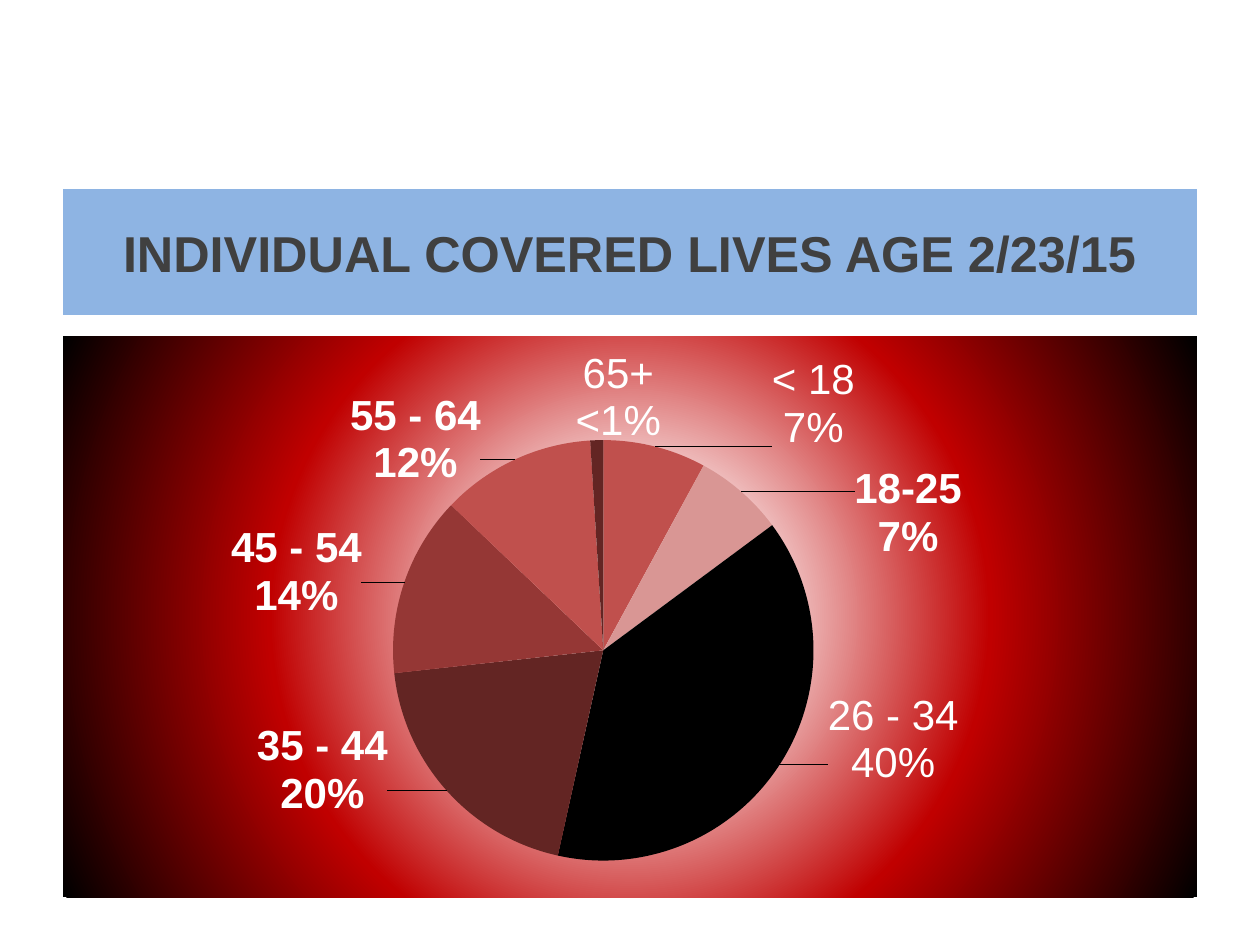
from lxml import etree
from pptx import Presentation
from pptx.chart.data import CategoryChartData
from pptx.dml.color import RGBColor
from pptx.enum.chart import XL_CHART_TYPE as CT, XL_LABEL_POSITION as LP
from pptx.enum.text import MSO_ANCHOR, PP_ALIGN
from pptx.oxml import parse_xml
from pptx.oxml.ns import nsdecls, qn
from pptx.util import Inches, Pt

COLORS = {
    "banner": "8EB4E3", "title": "404040", "white": "FFFFFF", "black": "000000",
    "glow": "C00000", "red": "C0504D", "pink": "D99694", "maroon": "632523",
    "brick": "953735",
}
FONT = "Arial"
CHART_W, CHART_H = 9, 4.45

# age group, value, slice colour, label shift in inches, own label text
AGES = [
    ("< 18", 8, "red", (1.6, -0.77), "< 18\n7%"),
    ("18-25", 7, "pink", (1.79, -0.25), None),
    ("26 - 34", 39, "black", (1.47, 0.21), "26 - 34\n40%"),
    ("35 - 44", 20, "maroon", (-1.55, 0.25), None),
    ("45 - 54", 14, "brick", (-1.43, -0.48), None),
    ("55 - 64", 12, "red", (-1.33, -0.59), None),
    ("65+", 1, "maroon", (0.17, -0.77), "65+\n<1%"),
]


def rgb(name):
    return RGBColor.from_string(COLORS[name])


def style(font, size, color, bold):
    font.name, font.size, font.bold = FONT, Pt(size), bold
    font.color.rgb = rgb(color)


def layout(**values):
    """Return a manual chart layout holding the given settings."""
    items = "".join(f'<c:{k} val="{v}"/>' for k, v in values.items())
    return parse_xml(f'<c:layout {nsdecls("c")}><c:manualLayout>{items}'
                     '</c:manualLayout></c:layout>')


def add_title(slide, text):
    sp = slide.shapes.title
    sp.left, sp.top, sp.width, sp.height = map(Inches, (0.5, 1.5, 9, 1))
    sp.fill.solid()
    sp.fill.fore_color.rgb = rgb("banner")
    tf = sp.text_frame
    tf.vertical_anchor = MSO_ANCHOR.MIDDLE
    p = tf.paragraphs[0]
    p.alignment = PP_ALIGN.CENTER
    r = p.add_run()
    r.text = text
    style(r.font, 28.8, "title", True)


def fill_background(chart):
    """Give the chart area a round glow."""
    stops = "".join(
        f'<a:gs pos="{pos * 1000}"><a:srgbClr val="{COLORS[name]}"/></a:gs>'
        for pos, name in ((15, "white"), (57, "glow"), (100, "black")))
    chart.element.find(qn("c:chart")).addnext(parse_xml(
        f'<c:spPr {nsdecls("c", "a")}><a:gradFill><a:gsLst>{stops}</a:gsLst>'
        '<a:path path="circle"><a:fillToRect l="50000" t="50000" r="50000" '
        'b="50000"/></a:path></a:gradFill><a:ln><a:noFill/></a:ln></c:spPr>'))


def place_plot(chart):
    area = chart.element.find(".//" + qn("c:plotArea"))
    for old in area.findall(qn("c:layout")):
        area.remove(old)
    area.insert(0, layout(layoutTarget="inner", xMode="edge", yMode="edge",
                          x=0.12, y=0.185, w=0.713, h=0.75))


def show_category_and_percent(labels):
    """Set the contents of one label or of a whole set of labels."""
    for tag, val in (("showVal", 0), ("showCatName", 1), ("showPercent", 1)):
        labels.find(qn("c:" + tag)).set("val", str(val))
    separator = etree.Element(qn("c:separator"))
    separator.text = "\n"
    labels.find(qn("c:showBubbleSize")).addnext(separator)


def format_slice(series, index, color, shift, text):
    point = series.points[index]
    point.format.fill.solid()
    point.format.fill.fore_color.rgb = rgb(color)
    label = point.data_label
    if text:
        tf = label.text_frame
        tf.text = text
        for p in tf.paragraphs:
            for r in p.runs:
                style(r.font, 24, "white", False)
    else:
        style(label.font, 24, "white", True)
    label.position = LP.INSIDE_END
    dx, dy = shift
    for element in series.data_labels._element.findall(qn("c:dLbl")):
        idx = element.find(qn("c:idx"))
        if idx.get("val") == str(index):
            idx.addnext(layout(x=dx / CHART_W, y=dy / CHART_H))
            show_category_and_percent(element)


def add_age_pie(slide):
    data = CategoryChartData()
    data.categories = [age[0] for age in AGES]
    data.add_series("Series 1", [age[1] for age in AGES])
    chart = slide.shapes.add_chart(CT.PIE, Inches(0.5), Inches(2.67),
                                   Inches(CHART_W), Inches(CHART_H), data).chart
    chart.has_legend = chart.has_title = False
    style(chart.font, 10, "black", False)
    fill_background(chart)
    place_plot(chart)
    series = chart.plots[0].series[0]
    labels = series.data_labels
    labels.number_format, labels.number_format_is_linked = "0%", False
    labels.position = LP.INSIDE_END
    style(labels.font, 24, "white", True)
    show_category_and_percent(labels._element)
    for i, (_, _, color, shift, text) in enumerate(AGES):
        format_slice(series, i, color, shift, text)


def main():
    prs = Presentation()
    prs.slide_width, prs.slide_height = Inches(10), Inches(7.5)
    slide = prs.slides.add_slide(prs.slide_layouts[5])
    add_title(slide, "INDIVIDUAL COVERED LIVES AGE 2/23/15")
    add_age_pie(slide)
    prs.save("out.pptx")


if __name__ == "__main__":
    main()
